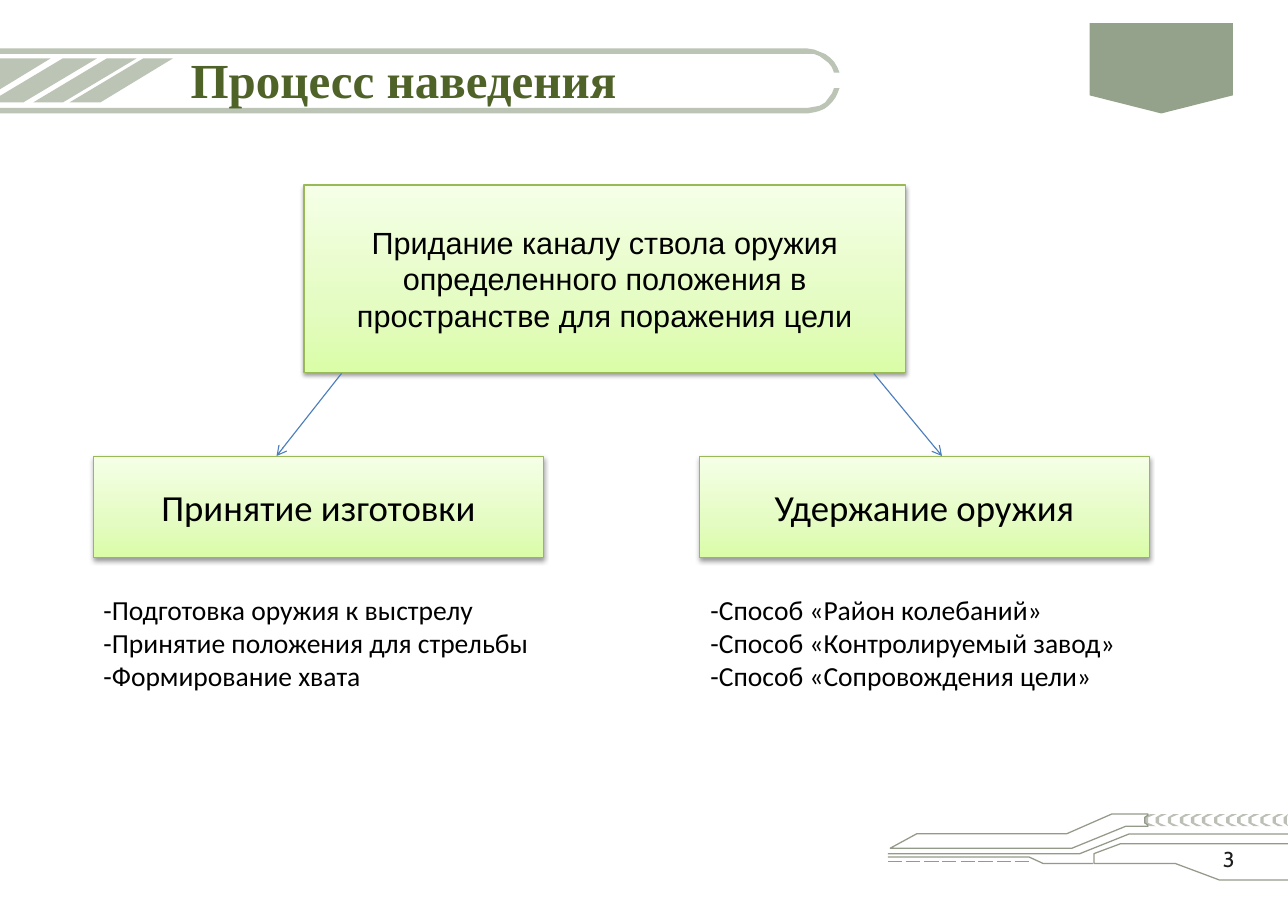
from copy import deepcopy
from lxml import etree
from pptx import Presentation
from pptx import util as u
from pptx.dml.color import RGBColor
from pptx.enum import shapes, text
from pptx.oxml.ns import qn

PX = 9144
SLIDE = (1169, 827)
COLORS = {"emblem": "94A28B", "banner": "94A28A", "rail": "949A8A", "title": "4F6228",
          "number": "1D1D1B", "ink": "000000", "border": "98B955", "arrow": "4B7EBC"}
GRADIENT = [(0, "DAFDA7"), (0.35, "E4FCC2"), (1, "F5FFE7")]

TITLE = ("Процесс наведения", (173, 44, 543, 54))
PAGE_NUMBER = ("3", (1110, 768, 29, 26))
BOXES = [
    ("Придание каналу ствола оружия определенного положения в пространстве для поражения цели",
     (276, 168, 546, 170), "Arial", 20),
    ("Принятие изготовки", (85, 414, 408, 92), "Calibri", 24),
    ("Удержание оружия", (635, 414, 408, 92), "Calibri", 24),
]
LISTS = [
    (["-Подготовка оружия к выстрелу", "-Принятие положения для стрельбы",
      "-Формирование хвата"], (84, 533, 458, 101)),
    (["-Способ «Район колебаний»", "-Способ «Контролируемый завод»",
      "-Способ «Сопровождения цели»"], (635, 533, 458, 101)),
]
ARROWS = [((310, 339), (251, 414)), ((793, 339), (855, 414))]

EMBLEM = (989, 21, 130, 82)
BANNER_BOTTOM = [(762, 80), (757, 80), (755, 85), (752, 89), (749, 93), (744, 96), (739, 97),
                 (733, 98), (0, 98), (0, 103), (733, 103), (739, 102), (743, 101), (748, 99),
                 (752, 96), (755, 93), (758, 89), (760, 85)]
BANNER_TOP = [(762, 66), (760, 61), (757, 56), (753, 52), (749, 49), (744, 47), (739, 45),
              (733, 44), (0, 44), (0, 49), (733, 49), (739, 49), (744, 51), (748, 54),
              (752, 57), (755, 61), (757, 66)]
STRIPES = [
    [(46, 53), (0, 53), (0, 81)],
    [(88, 53), (57, 53), (0, 87), (0, 93), (21, 93)],
    [(124, 53), (97, 53), (30, 93), (57, 93)],
    [(157, 53), (130, 53), (63, 93), (91, 93)],
]
CRESCENT = [(10, 0), (5, 0), (0, 3), (0, 8), (5, 11), (10, 11), (3, 8), (3, 3)]
CRESCENT_START, CRESCENT_SPAN, CRESCENT_COUNT = (1039, 739), 126, 13
RAILS = [
    ([(1169, 757), (1025, 757), (980, 775), (806, 775)], False),
    ([(1169, 799), (1107, 799), (1067, 784), (993, 784), (993, 775), (1017, 766),
      (1169, 766)], False),
    ([(1042, 740), (1042, 739), (1009, 739), (968, 757), (832, 757), (808, 770), (973, 770),
      (1022, 750), (1042, 750), (1042, 749), (1039, 747), (1039, 742)], True),
    ([(992, 784), (947, 784), (934, 778), (806, 778)], False),
]
DASH_START, DASH_SPAN, DASH_COUNT, DASH_LENGTH = (806, 782), 115, 8, 13


def emu(values):
    return [value * PX for value in values]


def rgb(name):
    return RGBColor.from_string(COLORS[name])


def spread(start, span, count):
    return [start + round(span * index / (count - 1)) for index in range(count)]


def add_outline(slide, contours, closed=True):
    builder = slide.shapes.build_freeform(*contours[0][0], scale=float(PX))
    for index, contour in enumerate(contours):
        if index:
            builder.move_to(*contour[0])
        builder.add_line_segments(contour[1:], close=closed)
    shape = builder.convert_to_shape()
    shape.shadow.inherit = False
    return shape


def add_solid(slide, contours, color):
    shape = add_outline(slide, contours)
    shape.fill.solid()
    shape.fill.fore_color.rgb = rgb(color)
    shape.line.fill.background()
    color_element = shape._element.spPr.find(qn("a:solidFill"))[0]
    etree.SubElement(color_element, qn("a:alpha"), val="63000")


def add_rail(slide, points, closed):
    shape = add_outline(slide, [points], closed)
    shape.fill.background()
    shape.line.color.rgb = rgb("rail")
    shape.line.width = u.Pt(0.82)


def add_line(slide, start, end, color, width, arrow=False):
    connector = slide.shapes.add_connector(
        shapes.MSO_CONNECTOR.STRAIGHT, *emu(start), *emu(end))
    connector.line.color.rgb = rgb(color)
    connector.line.width = u.Pt(width)
    properties = connector._element.spPr
    if arrow:
        etree.SubElement(properties.find(qn("a:ln")), qn("a:tailEnd"), type="arrow")
    etree.SubElement(properties, qn("a:effectLst"))


def write(shape, lines, font, size, color, align=text.PP_ALIGN.LEFT, bold=False):
    frame = shape.text_frame
    frame.word_wrap = True
    frame.text = "\n".join(lines)
    for paragraph in frame.paragraphs:
        paragraph.alignment = align
        for run in paragraph.runs:
            run.font.name = font
            run.font.size = u.Pt(size)
            run.font.bold = bold
            run.font.color.rgb = rgb(color)


def add_label(slide, lines, place, font, size, color, bold=False, inset=True,
              anchor=text.MSO_ANCHOR.TOP):
    shape = slide.shapes.add_textbox(*emu(place))
    frame = shape.text_frame
    frame.vertical_anchor = anchor
    if not inset:
        frame.margin_left = frame.margin_right = frame.margin_top = frame.margin_bottom = 0
    write(shape, lines, font, size, color, bold=bold)


def add_box(slide, caption, place, font, size):
    shape = slide.shapes.add_shape(shapes.MSO_SHAPE.RECTANGLE, *emu(place))
    shape.fill.gradient()
    shape.fill.gradient_angle = 90
    properties = shape._element.spPr
    stop_list = properties.find(qn("a:gradFill")).find(qn("a:gsLst"))
    stop_list.append(deepcopy(stop_list[0]))
    for stop, (position, color) in zip(shape.fill.gradient_stops, GRADIENT):
        stop.position = position
        stop.color.rgb = RGBColor.from_string(color)
    shape.line.color.rgb = rgb("border")
    shape.line.width = u.Pt(0.75)
    shape.shadow.inherit = False
    shadow = etree.SubElement(
        properties.find(qn("a:effectLst")), qn("a:outerShdw"), blurRad=str(u.Pt(3.1)),
        dist=str(u.Pt(1.6)), dir="5400000", rotWithShape="0")
    shadow_color = etree.SubElement(shadow, qn("a:srgbClr"), val=COLORS["ink"])
    etree.SubElement(shadow_color, qn("a:alpha"), val="38000")
    shape.text_frame.vertical_anchor = text.MSO_ANCHOR.MIDDLE
    write(shape, [caption], font, size, "ink", text.PP_ALIGN.CENTER)


def add_decoration(slide):
    emblem = slide.shapes.add_shape(
        shapes.MSO_SHAPE.FLOWCHART_OFFPAGE_CONNECTOR, *emu(EMBLEM))
    emblem.shadow.inherit = False
    emblem.fill.solid()
    emblem.fill.fore_color.rgb = rgb("emblem")
    emblem.line.fill.background()

    add_solid(slide, [BANNER_BOTTOM], "banner")
    add_solid(slide, STRIPES + [BANNER_TOP], "banner")
    left, top = CRESCENT_START
    crescents = [[(min(x + dx, SLIDE[0]), top + dy) for dx, dy in CRESCENT]
                 for x in spread(left, CRESCENT_SPAN, CRESCENT_COUNT)]
    add_solid(slide, crescents, "rail")
    for points, closed in RAILS:
        add_rail(slide, points, closed)
    left, top = DASH_START
    for x in spread(left, DASH_SPAN, DASH_COUNT):
        add_line(slide, (x, top), (x + DASH_LENGTH, top), "rail", 0.82)


def main():
    presentation = Presentation()
    presentation.slide_width, presentation.slide_height = emu(SLIDE)
    slide = presentation.slides.add_slide(presentation.slide_layouts[6])
    add_decoration(slide)
    caption, place = TITLE
    add_label(slide, [caption], place, "Times New Roman", 32, "title", bold=True,
              inset=False, anchor=text.MSO_ANCHOR.BOTTOM)
    caption, place = PAGE_NUMBER
    add_label(slide, [caption], place, "Cabin", 14, "number", inset=False)
    for box in BOXES:
        add_box(slide, *box)
    for start, end in ARROWS:
        add_line(slide, start, end, "arrow", 0.75, arrow=True)
    for lines, place in LISTS:
        add_label(slide, lines, place, "Calibri", 18, "ink")
    presentation.save("out.pptx")


if __name__ == "__main__":
    main()
